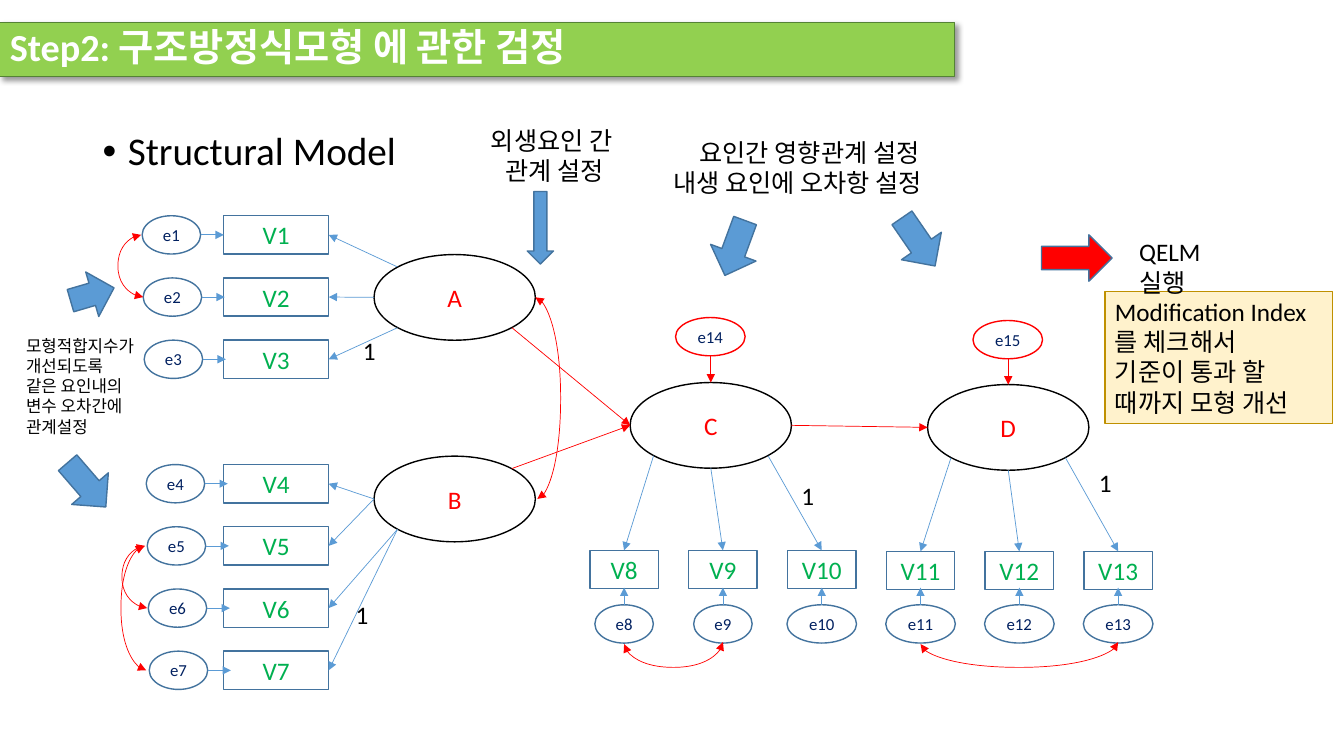
from lxml import etree
from pptx import Presentation, util as u
from pptx.dml.color import RGBColor
from pptx.enum import shapes, text
from pptx.oxml import ns, parse_xml

RECT, OVAL = shapes.MSO_SHAPE.RECTANGLE, shapes.MSO_SHAPE.OVAL
DOWN, RIGHT = shapes.MSO_SHAPE.DOWN_ARROW, shapes.MSO_SHAPE.RIGHT_ARROW
LEFT, CENTER = text.PP_ALIGN.LEFT, text.PP_ALIGN.CENTER
TOP, MIDDLE = text.MSO_ANCHOR.TOP, text.MSO_ANCHOR.MIDDLE
BLACK, RED, BLUE, EDGE = "000000", "FF0000", "5B9BD5", "43739E"
GREEN, NAVY = "00B050", "002060"

deck = Presentation()
deck.slide_width, deck.slide_height = u.Inches(13.33), u.Inches(7.5)
slide = deck.slides.add_slide(deck.slide_layouts[6])


def block(kind, box, lines=(), size=18, color=BLACK, fill=None, edge=None,
          width=1, align=CENTER, anchor=MIDDLE, bold=False, turn=0):
    """Add a shape, or a text box when kind is None; lines are its paragraphs."""
    place = [u.Inches(v) for v in box]
    if kind is None:
        item = slide.shapes.add_textbox(*place)
    else:
        item = slide.shapes.add_shape(kind, *place)
        item.shadow.inherit = False
        item.line.color.rgb = RGBColor.from_string(edge)
        item.line.width = u.Pt(width)
        if fill:
            item.fill.solid()
            item.fill.fore_color.rgb = RGBColor.from_string(fill)
        else:
            item.fill.background()
    item.rotation = turn
    frame = item.text_frame
    frame.word_wrap, frame.vertical_anchor = True, anchor
    for i, line in enumerate(lines):
        para = frame.add_paragraph() if i else frame.paragraphs[0]
        para.alignment = align
        run = para.add_run()
        run.text = line
        run.font.size, run.font.name, run.font.bold = u.Pt(size), "Calibri", bold
        run.font.color.rgb = RGBColor.from_string(color)
    return item


def link(start, end, color=BLUE, turn=None):
    """Add an arrow; with a turn it is a two-headed arc bulging that way from right."""
    kind = shapes.MSO_CONNECTOR.STRAIGHT if turn is None else shapes.MSO_CONNECTOR.CURVE
    line = slide.shapes.add_connector(kind, *[u.Inches(v) for v in (*start, *end)])
    line.line.color.rgb = RGBColor.from_string(color)
    line.line.width = u.Pt(0.5)
    stroke = line.line._get_or_add_ln()
    for tip in ("headEnd", "tailEnd")[turn is None:]:
        etree.SubElement(stroke, ns.qn("a:" + tip), type="triangle")
    props = line._element.spPr
    etree.SubElement(props, ns.qn("a:effectLst"))
    if turn is not None:
        props.find(ns.qn("a:xfrm")).set("rot", str(turn * 60000))
        guides = props.find(ns.qn("a:prstGeom")).get_or_add_avLst()
        bulge = round(0.25 / (end[0] - start[0]) * 100000)
        etree.SubElement(guides, ns.qn("a:gd"), name="adj1", fmla=f"val {bulge}")


# Heading
title = block(RECT, (0, 0.22, 9.47, 0.54), ["Step2: 구조방정식모형 에 관한 검정"], 27.3,
              "FFFFFF", "92D050", "548235", 0.75, LEFT, bold=True)
title.text_frame.paragraphs[0].line_spacing = 0.9
title._element.spPr.find(ns.qn("a:effectLst")).append(parse_xml(
    f'<a:outerShdw {ns.nsdecls("a")} blurRad="50800" dist="38100" dir="2700000" '
    'algn="tl" rotWithShape="0"><a:srgbClr val="000000"><a:alpha val="40000"/>'
    '</a:srgbClr></a:outerShdw>'))
topic = block(None, (0.92, 1.26, 3.87, 0.52), ["Structural Model"], 28,
              align=LEFT, anchor=TOP).text_frame.paragraphs[0]
topic.line_spacing = 0.9
bullet = topic._p.get_or_add_pPr()
bullet.set("marL", str(u.Inches(0.25)))
bullet.set("indent", str(u.Inches(-0.25)))
etree.SubElement(bullet, ns.qn("a:buFont"), typeface="Arial")
etree.SubElement(bullet, ns.qn("a:buChar"), char="•")

# Factors, with the points where arrows meet their outlines
FACTOR_W, FACTOR_H, NODE_H = 1.6, 0.85, 0.38
factors = {"A": (4.51, 2.95), "B": (4.51, 4.95), "C": (7.05, 4.22), "D": (10, 4.24)}
port = {}
for name, (x, y) in factors.items():
    block(OVAL, (x - FACTOR_W / 2, y - FACTOR_H / 2, FACTOR_W, FACTOR_H), [name],
          color=RED, edge=BLACK)
    for dx in (-1, 0, 1):
        for dy in (-1, 0, 1):
            reach = 0.71 if dx and dy else 1
            port[name, dx, dy] = (x + dx * reach * FACTOR_W / 2,
                                  y + dy * reach * FACTOR_H / 2)

# Indicators V1-V7 and errors e1-e7 in rows; the fourth row is left free
ROW = (6.46 - 2.14) / 7
row_mid = [2.33 + ROW * row for row in range(8)]
sources = [("A", -1, -1), ("A", -1, 0), ("A", -1, 1), None,
           ("B", -1, 0), ("B", -1, 0), ("B", -1, 1), ("B", -1, 1)]
used_rows = [row for row in range(8) if sources[row]]
for number, row in enumerate(used_rows, 1):
    mid, error_x = row_mid[row], 1.41 + 0.01 * row
    block(RECT, (2.22, mid - NODE_H / 2, 1.04, NODE_H), [f"V{number}"], color=GREEN, edge=EDGE)
    block(OVAL, (error_x, mid - NODE_H / 2, 0.58, NODE_H), [f"e{number}"], 12, NAVY, edge=EDGE)
    link((error_x + 0.58, mid), (error_x + 0.81, mid))
    link(port[sources[row]], (3.26, mid))

# Indicators V8-V13 and errors e8-e13 in columns
COLUMN = 0.98
column_mid = [6.19 + COLUMN * column for column in range(6)]
for column, mid in enumerate(column_mid):
    number, top = column + 8, 5.46 + 0.01 * (column // 3)
    error_w = 0.58 if number < 10 else 0.69
    block(RECT, (mid - 0.34, top, 0.68, NODE_H), [f"V{number}"], color=GREEN, edge=EDGE)
    block(OVAL, (mid - error_w / 2, 6, error_w, NODE_H), [f"e{number}"], 12, NAVY, edge=EDGE)
    link((mid, 6), (mid, 5.83))
    link(port["CD"[column // 3], column % 3 - 1, 1], (mid, top))

# Errors of C and D, then the paths between factors
for name, error, top in (("C", "e14", 3.15), ("D", "e15", 3.18)):
    x = factors[name][0]
    block(OVAL, (x - 0.35, top, 0.69, NODE_H), [error], 12, NAVY, edge=RED)
    link((x, top + NODE_H), port[name, 0, -1], RED)
for start, end in ((("A", 1, 1), "C"), (("B", 1, -1), "C"), (("C", 1, 0), "D")):
    link(port[start], port[end, -1, 0], RED)

# Covariances: centre of each arc, its span and the way it bulges
for x, y, span, turn in (
        (5.32, 2.95 + 1, 2, 0),
        (1.41, (row_mid[0] + row_mid[1]) / 2, ROW, 180),
        (1.45, (row_mid[5] + row_mid[6]) / 2, ROW, 180),
        (1.44, (row_mid[5] + row_mid[7]) / 2, 2 * ROW, 180),
        ((column_mid[0] + column_mid[1]) / 2, 6.38, COLUMN, 90),
        ((column_mid[3] + column_mid[5]) / 2, 6.38, 2 * COLUMN, 90)):
    link((x - 0.01, y - span / 2), (x + 0.01, y + span / 2), RED, turn)

# Fixed loadings
for x, y in ((3.5, 3.28), (3.43, 5.9), (7.85, 4.72), (10.8, 4.59)):
    block(None, (x, y, 0.33, 0.4), ["1"], align=LEFT, anchor=TOP)

# Guidance
block(RECT, (10.96, 2.89, 2.26, 1.31),
      ["Modification Index를 체크해서", "기준이 통과 할 때까지 모형 개선"],
      fill="FFF2CC", edge="BF9000", width=0.75, align=LEFT, anchor=TOP)
block(None, (0.16, 3.28, 1.3, 1.11),
      ["모형적합지수가 개선되도록 같은 요인내의 변수 오차간에 관계설정"], 12,
      align=LEFT, anchor=TOP)
block(None, (4.71, 1.19, 1.58, 0.71), ["외생요인 간 ", "관계 설정"], anchor=TOP)
influence = block(None, (6.58, 1.31, 2.9, 0.71),
                  ["요인간 영향관계 설정", "내생 요인에 오차항 설정"], anchor=TOP)
influence.text_frame.paragraphs[1].alignment = LEFT
block(None, (11.2, 2.3, 1.2, 0.4), ["QELM 실행"], align=LEFT, anchor=TOP)
for kind, box, turn, fill in (
        (DOWN, (0.62, 4.52, 0.48, 0.58), 319.2, BLUE),
        (RIGHT, (0.69, 2.69, 0.45, 0.46), 343.7, BLUE),
        (DOWN, (7.05, 2.17, 0.48, 0.58), 20.2, BLUE),
        (DOWN, (8.87, 2.11, 0.48, 0.58), 325.5, BLUE),
        (DOWN, (5.23, 1.9, 0.26, 0.72), 0, BLUE),
        (RIGHT, (10.33, 2.33, 0.7, 0.46), 0, RED)):
    block(kind, box, fill=fill, edge=EDGE, turn=turn)

deck.save("out.pptx")
